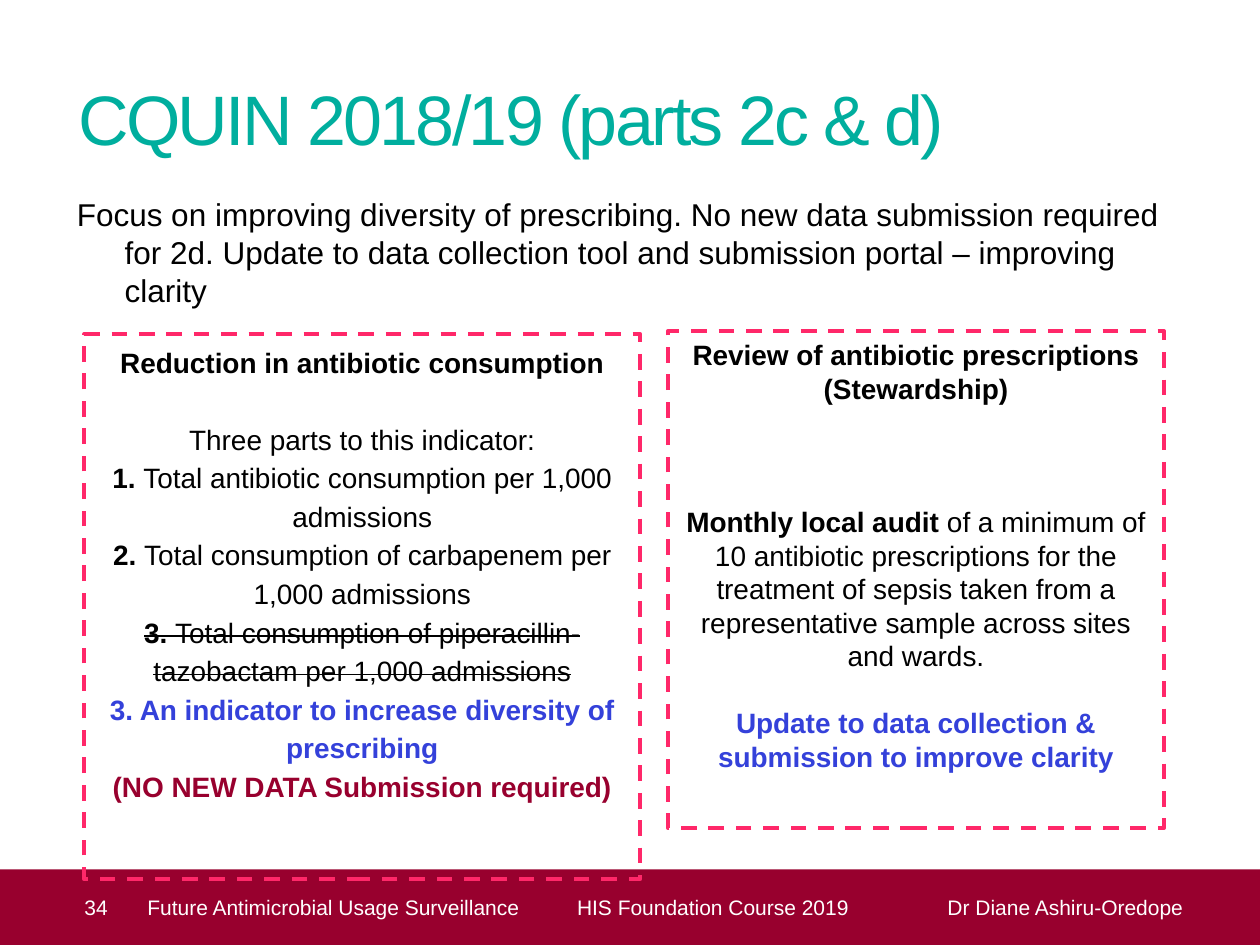
from pptx import Presentation
from pptx.dml.color import RGBColor
from pptx.enum.dml import MSO_LINE
from pptx.enum.shapes import MSO_SHAPE
from pptx.enum.text import MSO_ANCHOR, PP_ALIGN
from pptx.oxml.ns import qn
from pptx.util import Inches, Pt
from lxml.etree import SubElement

THEME = {
    "font": "Arial",
    "teal": "00AE9E", "black": "000000", "white": "FFFFFF",
    "maroon": "98002E", "pink": "FF2869", "blue": "3441DA",
    "title": 40, "body": 18, "panel": 16, "footer": 12,
}

TITLE = "CQUIN 2018/19 (parts 2c & d)"
INTRO = ("Focus on improving diversity of prescribing. No new data submission required "
         "for 2d. Update to data collection tool and submission portal – improving clarity")
PAGE = "34"
FOOTER = ["Future Antimicrobial Usage Surveillance", "HIS Foundation Course 2019",
          "Dr Diane Ashiru-Oredope"]
FOOTER_TABS = [3.6, 6.54]

PANELS = [
    {"box": (0.67, 2.65, 4.41, 4.33), "spacing": 1.15, "paras": [
        {"bold": "Reduction in antibiotic consumption"},
        {"plain": "Three parts to this indicator:", "before": 22},
        {"bold": "1. ", "plain": "Total antibiotic consumption per 1,000 admissions"},
        {"bold": "2. ", "plain": "Total consumption of carbapenem per 1,000 admissions"},
        {"bold": "3. ", "plain": "Total consumption of piperacillin-tazobactam per 1,000 admissions",
         "strike": True},
        {"bold": "3. An indicator to increase diversity of prescribing", "color": "blue"},
        {"bold": "(NO NEW DATA Submission required)", "color": "maroon"},
    ]},
    {"box": (5.3, 2.63, 3.94, 3.94), "spacing": 1.0, "paras": [
        {"bold": "Review of antibiotic prescriptions (Stewardship)"},
        {"bold": "Monthly local audit ",
         "plain": "of a minimum of 10 antibiotic prescriptions for the treatment of sepsis "
                  "taken from a representative sample across sites and wards.", "before": 57},
        {"bold": "Update to data collection & submission to improve clarity",
         "color": "blue", "before": 19},
    ]},
]


def rgb(name):
    return RGBColor.from_string(THEME[name])


def style(r, size, color, bold=False):
    r.font.name = THEME["font"]
    r.font.size = Pt(THEME[size])
    r.font.color.rgb = rgb(color)
    r.font.bold = bold


def frame(sp, margin=0, anchor=MSO_ANCHOR.TOP):
    tf = sp.text_frame
    tf.word_wrap = True
    tf.vertical_anchor = anchor
    tf.margin_left = tf.margin_right = tf.margin_top = tf.margin_bottom = Inches(margin)
    return tf


def add_text(s, box, text, size, color, anchor=MSO_ANCHOR.TOP):
    tf = frame(s.shapes.add_textbox(*map(Inches, box)), anchor=anchor)
    tf.text = text
    p = tf.paragraphs[0]
    style(p.runs[0], size, color)
    return p


def add_rect(s, box):
    sp = s.shapes.add_shape(MSO_SHAPE.RECTANGLE, *map(Inches, box))
    sp.shadow.inherit = False
    return sp


def add_footer(s):
    bar = add_rect(s, (0, 6.9, 10, 0.6))
    bar.fill.solid()
    bar.fill.fore_color.rgb = rgb("maroon")
    bar.line.fill.background()
    tf = frame(bar, anchor=MSO_ANCHOR.MIDDLE)
    tf.margin_left = Inches(0.67)
    tf.text = PAGE
    p = tf.paragraphs[0]
    p.alignment = PP_ALIGN.LEFT
    style(p.runs[0], "footer", "white")

    p = add_text(s, (1.17, 6.9, 8.63, 0.6), "\t".join(FOOTER), "footer", "white",
                 MSO_ANCHOR.MIDDLE)
    tabs = SubElement(p._p.get_or_add_pPr(), qn("a:tabLst"))
    for stop in FOOTER_TABS:
        SubElement(tabs, qn("a:tab"), pos=str(Inches(stop - 0.19)), algn="l")


def add_panel(s, panel):
    sp = add_rect(s, panel["box"])
    sp.fill.background()
    sp.line.color.rgb = rgb("pink")
    sp.line.width = Pt(2.25)
    sp.line.dash_style = MSO_LINE.DASH
    tf = frame(sp, 0.05)
    for i, para in enumerate(panel["paras"]):
        p = tf.add_paragraph() if i else tf.paragraphs[0]
        p.alignment = PP_ALIGN.CENTER
        p.line_spacing = panel["spacing"]
        p.space_before = Pt(para.get("before", 0))
        for weight in ("bold", "plain"):
            if weight in para:
                r = p.add_run()
                r.text = para[weight]
                style(r, "panel", para.get("color", "black"), weight == "bold")
                if para.get("strike"):
                    r._r.get_or_add_rPr().set("strike", "sngStrike")


def main():
    prs = Presentation()
    prs.slide_width, prs.slide_height = Inches(10), Inches(7.5)
    s = prs.slides.add_slide(prs.slide_layouts[6])

    p = add_text(s, (0.62, 0.6, 8.78, 0.71), TITLE, "title", "teal")
    p.runs[0]._r.get_or_add_rPr().set("spc", "-150")

    p = add_text(s, (0.61, 1.55, 8.78, 0.9), INTRO, "body", "black")
    pPr = p._p.get_or_add_pPr()
    pPr.set("marL", str(Inches(0.38)))
    pPr.set("indent", str(Inches(-0.38)))

    add_footer(s)
    for panel in PANELS:
        add_panel(s, panel)
    prs.save("out.pptx")


if __name__ == "__main__":
    main()
